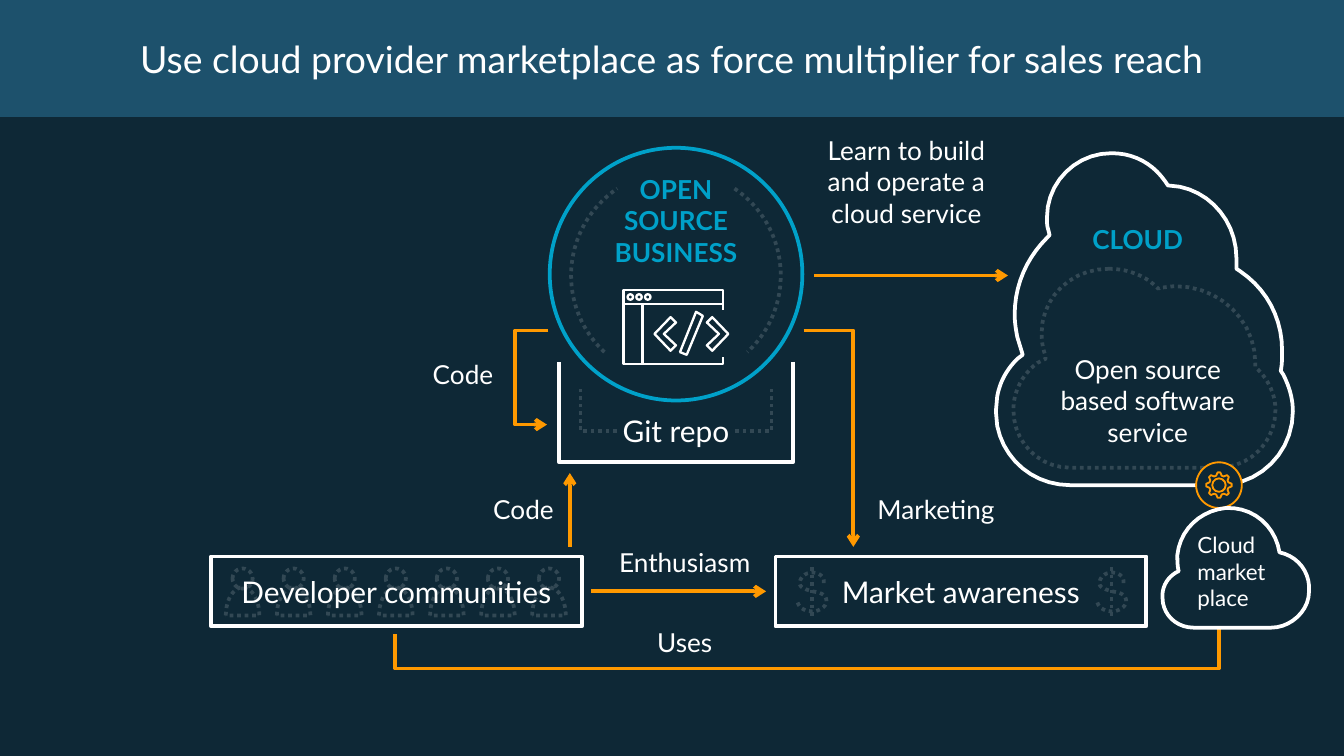
from math import cos, radians, sin

from lxml import etree
from pptx import Presentation
from pptx.dml.color import RGBColor
from pptx.enum.dml import MSO_LINE
from pptx.enum.shapes import MSO_CONNECTOR, MSO_SHAPE
from pptx.enum.text import MSO_ANCHOR, MSO_AUTO_SIZE, PP_ALIGN
from pptx.oxml.ns import qn
from pptx.util import Inches, Pt

RECT, OVAL, ARC = MSO_SHAPE.RECTANGLE, MSO_SHAPE.OVAL, MSO_SHAPE.ARC
STRAIGHT, ELBOW = MSO_CONNECTOR.STRAIGHT, MSO_CONNECTOR.ELBOW
TOP, MIDDLE, BOTTOM = MSO_ANCHOR.TOP, MSO_ANCHOR.MIDDLE, MSO_ANCHOR.BOTTOM
LEFT, CENTER = PP_ALIGN.LEFT, PP_ALIGN.CENTER
DOTTED, FIT = MSO_LINE.ROUND_DOT, MSO_AUTO_SIZE.SHAPE_TO_FIT_TEXT

NAVY, TEAL, WHITE = "0E2836", "1D516C", "FFFFFF"
BLUE, ORANGE, GREY = "00A1C9", "FF9900", "324854"
COLUMNS, ROWS = 100, 56.25  # square grid cells


def color(hex_code):
    return RGBColor.from_string(hex_code)


def flatten(outline, steps=10):
    """Turn points (x, y) and cubic curves (six numbers) into plain points."""
    points = [outline[0]]
    for part in outline[1:]:
        if len(part) == 2:
            points.append(part)
            continue
        ends = [points[-1], part[:2], part[2:4], part[4:]]
        for i in range(1, steps + 1):
            t = i / steps
            weights = ((1 - t) ** 3, 3 * t * (1 - t) ** 2, 3 * t * t * (1 - t), t ** 3)
            points.append(tuple(sum(w * end[axis] for w, end in zip(weights, ends))
                                for axis in (0, 1)))
    return points


class Diagram:
    font = "Lato"

    def __init__(self, prs):
        self.cell = prs.slide_width / COLUMNS
        self.slide = prs.slides.add_slide(prs.slide_layouts[6])
        self.shapes = self.slide.shapes
        self.slide.background.fill.solid()
        self.slide.background.fill.fore_color.rgb = color(NAVY)

    def grid(self, *cells):
        return [round(c * self.cell) for c in cells]

    def stroke(self, line, tint, width, dotted=False):
        line.color.rgb = color(tint)
        line.width = Pt(width)
        if dotted:
            line.dash_style = DOTTED

    def style(self, shape, line=None, width=2, fill=None, dotted=False):
        shape.shadow.inherit = False
        if fill:
            shape.fill.solid()
            shape.fill.fore_color.rgb = color(fill)
        else:
            shape.fill.background()
        if line:
            self.stroke(shape.line, line, width, dotted)
        else:
            shape.line.fill.background()
        return shape

    def shape(self, kind, box, **look):
        return self.style(self.shapes.add_shape(kind, *self.grid(*box)), **look)

    def outline(self, parts, closed=True, **look):
        points = [tuple(self.grid(*p)) for p in flatten(parts)]
        builder = self.shapes.build_freeform(*points[0])
        builder.add_line_segments(points[1:], close=closed)
        return self.style(builder.convert_to_shape(), **look)

    def arc(self, box, start, end, **look):
        arc = self.shape(ARC, box, **look)
        for i, degrees in enumerate((start, end)):
            arc.adjustments[i] = degrees * 0.6  # 60000 units a degree

    def line(self, start, end, tint=ORANGE, width=2, arrow=False, dotted=False,
             bend=None, adjust=()):
        kind = ELBOW if bend else STRAIGHT
        link = self.shapes.add_connector(kind, *self.grid(*start, *end))
        self.stroke(link.line, tint, width, dotted)
        props = link._element.spPr
        if arrow:
            etree.SubElement(props.find(qn("a:ln")), qn("a:tailEnd"), type="arrow")
        etree.SubElement(props, qn("a:effectLst"))
        if bend:
            geometry = props.find(qn("a:prstGeom"))
            geometry.set("prst", f"bentConnector{bend}")
            guides = geometry.find(qn("a:avLst"))
            for i, share in enumerate(adjust, 1):
                etree.SubElement(guides, qn("a:gd"), name=f"adj{i}",
                                 fmla=f"val {round(share * 100000)}")

    def add_text(self, shape, *lines, size=14, tint=WHITE, bold=False, anchor=MIDDLE,
                 align=CENTER, insets=(0, 0, 0, 0), wrap=True):
        frame = shape.text_frame
        frame.word_wrap, frame.vertical_anchor = wrap, anchor
        (frame.margin_left, frame.margin_top,
         frame.margin_right, frame.margin_bottom) = self.grid(*insets)
        paragraph = frame.paragraphs[0]
        paragraph.alignment = align
        for i, text in enumerate(lines):
            if i:
                paragraph.add_line_break()
            run = paragraph.add_run()
            run.text = text
            run.font.name, run.font.size, run.font.bold = self.font, Pt(size), bold
            run.font.color.rgb = color(tint)

    def label(self, text, box, wrap=False):
        area = self.shapes.add_textbox(*self.grid(*box))
        self.add_text(area, text, anchor=TOP, insets=(1, 0.5, 1, 0.5), wrap=wrap)
        area.text_frame.auto_size = FIT


def draw_cloud(d):
    cloud = d.outline([
        (82.7, 11.4), (84.4, 11.4, 85.8, 12.2, 86.7, 13.5), (86.9, 13.8), (87.8, 13.9),
        (90.2, 14.4, 92, 16.6, 92, 19.2), (92, 20), (92.3, 20.2),
        (94.2, 21.5, 95.4, 23.6, 95.4, 26.1), (95.4, 26.6, 95.4, 27.1, 95.3, 27.6),
        (95.5, 27.9), (95.9, 28.7, 96.2, 29.6, 96.2, 30.6),
        (96.2, 33.7, 93.7, 36.1, 90.7, 36.1), (79.6, 36.1),
        (76.9, 36.1, 74.7, 34.2, 74.2, 31.7), (74.1, 30.6), (74.2, 29.5),
        (74.4, 28.4, 74.9, 27.5, 75.7, 26.7), (76.1, 26.4), (75.7, 25.1),
        (75.6, 24.6, 75.5, 24, 75.5, 23.4), (75.5, 21.2, 76.4, 19.2, 77.9, 17.7),
        (78.1, 17.5), (78, 17.1), (77.9, 16.8, 77.9, 16.5, 77.9, 16.2),
        (77.9, 13.5, 80.1, 11.4, 82.7, 11.4)], line=WHITE)
    d.add_text(cloud, "CLOUD", tint=BLUE, bold=True, insets=(0, 0, 1, 12))
    d.outline([
        (82.5, 20), (83.9, 20, 85.2, 20.5, 86.1, 21.4), (86.2, 21.5), (86.3, 21.4),
        (86.7, 21.4, 87.1, 21.3, 87.5, 21.3), (90.8, 21.3, 93.4, 23.9, 93.4, 27),
        (93.4, 27.3), (93.6, 27.5), (94.4, 28.3, 94.9, 29.4, 94.9, 30.5),
        (94.9, 32.9, 93, 34.8, 90.6, 34.8), (79.6, 34.8),
        (77.3, 34.8, 75.4, 32.9, 75.4, 30.5), (75.4, 29.1, 76.1, 27.8, 77.2, 27),
        (77.8, 26.7), (77.8, 26.5), (77.6, 26, 77.5, 25.4, 77.5, 24.8),
        (77.5, 22.1, 79.7, 20, 82.5, 20)], line=GREY, dotted=True)


def draw_business(d):
    # Code window icon
    icon = {"line": WHITE, "width": 1.25}
    d.line((47.8, 27.1), (47.8, 22.6), WHITE, 1.25)
    for i in range(3):
        d.shape(OVAL, (46.7 + 0.65 * i, 21.9, 0.4, 0.4), **icon)
    d.outline([(53.8, 26.6), (53.8, 27.1), (46.4, 27.1), (46.4, 21.6), (53.8, 21.6),
               (53.8, 23.1)], closed=False, **icon)
    d.line((46.4, 22.6), (53.8, 22.6), WHITE, 1.25)
    chevron = [(49.9, 26.1), (48.7, 24.85), (49.9, 23.6), (50.3, 24), (49.4, 24.85),
               (50.3, 25.7)]
    d.outline(chevron, **icon)
    d.outline([(102.9 - x, y) for x, y in chevron], **icon)
    d.outline([(51.1, 26.4), (50.6, 26.2), (51.8, 23.2), (52.3, 23.5)], **icon)

    # Business circle above its code host
    business = d.shape(OVAL, (40.9, 11, 18.8, 18.8), line=BLUE)
    d.add_text(business, "OPEN", "SOURCE", "BUSINESS", tint=BLUE, bold=True,
               insets=(1, 0, 1, 8))
    host = d.outline([(59, 26.9), (59, 34.4), (41.6, 34.4), (41.6, 26.9)],
                     closed=False, line=WHITE)
    d.add_text(host, "Git repo", size=16, anchor=BOTTOM, insets=(1, 0, 1, 1))
    for start, end in ((133, 236), (304, 47)):
        d.arc((42.5, 12.7, 15.6, 15.6), start, end, line=GREY, dotted=True)
    for inner, outer in ((54.7, 57.4), (45.9, 43.2)):
        d.line((inner, 32.1), (outer, 28.8), GREY, dotted=True, bend=2)


def draw_audiences(d):
    # Row of people behind the developer box
    for i in range(7):
        x = 16.8 + 3.8 * i
        d.shape(OVAL, (x + 0.5, 42.3, 1.5, 1.5), line=GREY, dotted=True)
        d.outline([(x, 45.8), (x, 44.6, x + 0.6, 43.7, x + 1.25, 43.7),
                   (x + 1.9, 43.7, x + 2.5, 44.6, x + 2.5, 45.8)],
                  line=GREY, dotted=True)
    for x, name in ((15.7, "Developer communities"), (57.7, "Market awareness")):
        d.add_text(d.shape(RECT, (x, 41.4, 27.6, 5.2), line=WHITE), name, size=16)
    # Dollar signs in the market box
    for x in (60.4, 82.7):
        d.outline([(x + 0.9, 43.4), (x + 0.9, 43.3, x + 1, 42.7, x + 0.1, 42.6),
                   (x - 0.8, 42.6, x - 0.9, 43.3, x - 0.9, 43.4),
                   (x - 0.9, 43.4, x - 0.9, 43.7, x - 0.5, 43.8),
                   (x - 0.4, 43.9, x - 0.2, 43.9, x, 44),
                   (x + 0.8, 44.1, x + 1.1, 44.3, x + 1.1, 44.8),
                   (x + 1, 45.2, x + 0.6, 45.4, x + 0.2, 45.5),
                   (x - 0.3, 45.5, x - 1, 45.4, x - 1.1, 44.6)],
                  closed=False, line=GREY, dotted=True)
        d.line((x, 42.2), (x, 45.9), GREY, dotted=True)


def draw_marketplace(d):
    badge = {"line": ORANGE, "width": 1, "fill": NAVY}
    d.shape(OVAL, (89, 34.4, 3.4, 3.4), **badge)
    # Gear with eight teeth
    tooth = ((-16, 0.73), (-6, 0.95), (6, 0.95), (16, 0.73))
    d.outline([(90.7 + r * cos(radians(45 * i + a)), 36.1 + r * sin(radians(45 * i + a)))
               for i in range(8) for a, r in tooth], **badge)
    d.shape(OVAL, (90.2, 35.6, 1, 1), **badge)
    market = d.outline([
        (87.7, 42.5), (87.6, 42.1, 87.6, 41.7, 87.6, 41.3),
        (87.8, 39.4, 89.3, 38, 91.2, 37.8), (93.3, 37.7, 94.9, 39.2, 95.2, 41.1),
        (96.6, 41.4, 97.5, 42.6, 97.4, 44), (97.4, 45.5, 96, 46.7, 94.6, 46.7),
        (88.8, 46.7), (87.5, 46.7, 86.5, 45.7, 86.5, 44.5),
        (86.4, 43.6, 87, 42.8, 87.7, 42.5)], line=WHITE, fill=NAVY)
    d.add_text(market, "Cloud", "market", "place", size=12, align=LEFT,
               insets=(2.6, 0.5, 0, 0))


def main():
    prs = Presentation()
    prs.slide_width, prs.slide_height = Inches(10), Inches(10 * ROWS / COLUMNS)
    d = Diagram(prs)

    # Flows
    d.line((60.6, 20.5), (75, 20.5), arrow=True)
    d.line((42.4, 40.7), (42.4, 35.2), arrow=True)
    d.line((44, 44), (57, 44), arrow=True)
    d.line((90.7, 36.6), (29.4, 47.2), bend=4, adjust=(0, 1.24))
    d.line((59.8, 24.6), (63.5, 40.7), arrow=True, bend=2)
    d.line((40.8, 24.6), (40.7, 31.6), arrow=True, bend=3, adjust=(25,))
    d.label("Learn to build and operate a cloud service", (60.6, 9.5, 13.7, 10.4), wrap=True)
    for text, x, y, width in (("Code", 35.7, 36.2, 6.5), ("Enthusiasm", 44.8, 40.2, 12.3),
                              ("Code", 31.2, 26.2, 6.5), ("Marketing", 64.1, 36.2, 11.1),
                              ("Uses", 47.9, 46.1, 6.1)):
        d.label(text, (x, y, width, 3.4))

    # Parties
    draw_cloud(d)
    draw_business(d)
    draw_audiences(d)
    draw_marketplace(d)
    d.label("Open source based software service", (77.2, 25.8, 16.4, 8.1), wrap=True)

    # Title band
    d.add_text(d.shape(RECT, (0, 0, COLUMNS, 8.7), fill=TEAL),
               "Use cloud provider marketplace as force multiplier for sales reach", size=20)
    prs.save("out.pptx")


if __name__ == "__main__":
    main()
